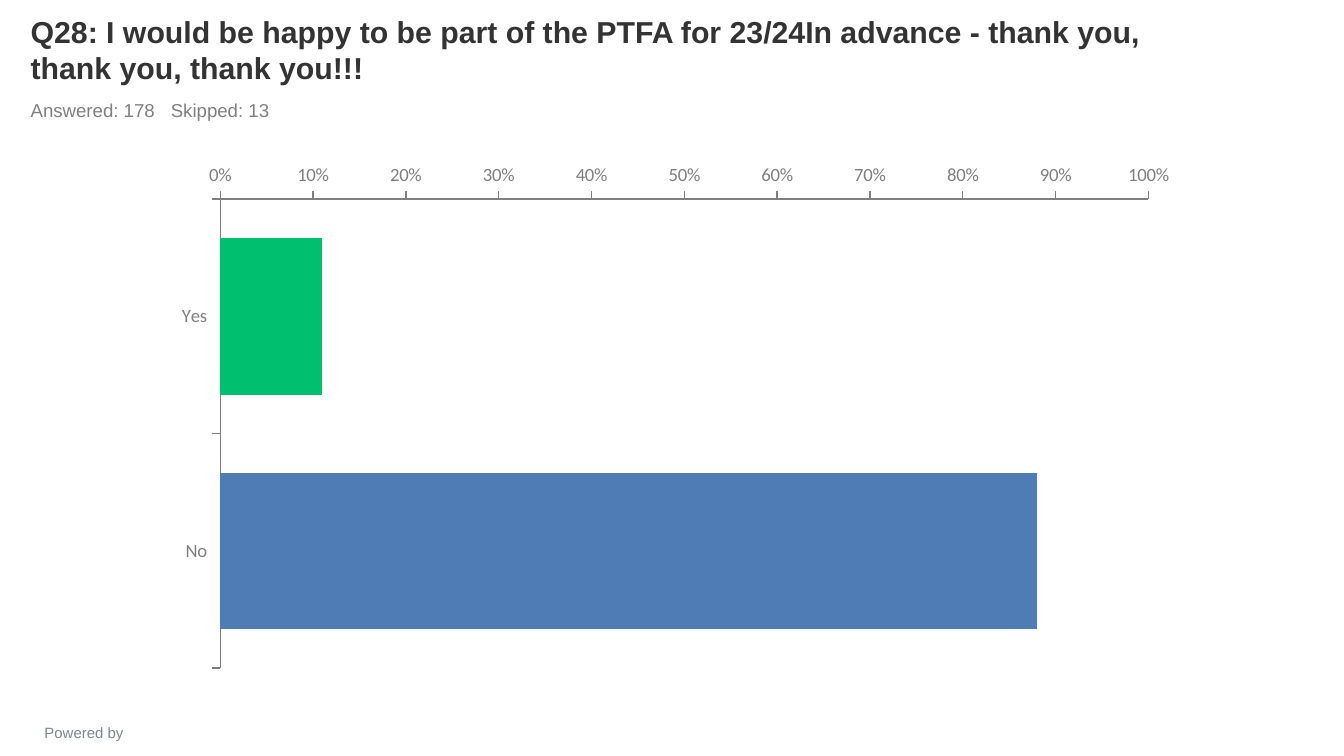
from pptx import Presentation
from pptx.chart.data import CategoryChartData
from pptx.dml.color import RGBColor
from pptx.enum.chart import XL_AXIS_CROSSES, XL_CHART_TYPE, XL_TICK_LABEL_POSITION, XL_TICK_MARK
from pptx.enum.text import MSO_ANCHOR, PP_ALIGN
from pptx.util import Cm, Pt
from lxml.etree import SubElement
from pptx.oxml.ns import qn

DARK = RGBColor(0x33, 0x33, 0x33)
GRAY = RGBColor(0x80, 0x80, 0x80)
AXIS = RGBColor(0x7F, 0x7F, 0x7F)
SLATE = RGBColor(0x7C, 0x87, 0x8E)
GREEN = RGBColor(0x00, 0xBF, 0x6F)
BLUE = RGBColor(0x50, 0x7C, 0xB6)

deck = Presentation()
deck.slide_width = Cm(25.4)
deck.slide_height = Cm(14.29)
slide = deck.slides.add_slide(deck.slide_layouts[6])


def add_text(text, left, top, width, height, size, color, bold=False):
    box = slide.shapes.add_textbox(Cm(left), Cm(top), Cm(width), Cm(height))
    frame = box.text_frame
    frame.word_wrap = True
    frame.text = text
    font = frame.paragraphs[0].runs[0].font
    font.name = "Arial"
    font.size = Pt(size)
    font.bold = bold
    font.color.rgb = color
    return frame


credit = add_text("Powered by", 0.13, 13.56, 2.92, 0.46, 8, SLATE)
credit.paragraphs[0].alignment = PP_ALIGN.CENTER

title = add_text(
    "Q28: I would be happy to be part of the PTFA for 23/24In advance - thank you, thank you, thank you!!!",
    0.33, 0.23, 22.86, 1.52, 16.2, DARK, True)
title.vertical_anchor = MSO_ANCHOR.BOTTOM

count = add_text("Answered: 178\tSkipped: 13", 0.33, 1.75, 22.86, 0.66, 10, GRAY)
props = count.paragraphs[0]._p.get_or_add_pPr()
tabs = SubElement(props, qn("a:tabLst"))
SubElement(tabs, qn("a:tab"), pos=str(Cm(2.65)), algn="l")

data = CategoryChartData(number_format="0%")
data.categories = ["Yes", "No"]
data.add_series("Series 1", [0.11, 0.88])
chart = slide.shapes.add_chart(
    XL_CHART_TYPE.BAR_CLUSTERED, Cm(3.05), Cm(2.92), Cm(19.43), Cm(9.91), data).chart
chart.has_legend = False
chart.has_title = False
chart.font.name = "Calibri"
chart.font.size = Pt(18)
chart.font.color.rgb = DARK

plot = chart.plots[0]
plot.gap_width = 50
plot.overlap = 100
plot.vary_by_categories = False
bars = plot.series[0]
bars.invert_if_negative = False
bars.format.fill.solid()
bars.format.fill.fore_color.rgb = GREEN
for spot, color in enumerate([GREEN, BLUE]):
    fill = bars.points[spot].format.fill
    fill.solid()
    fill.fore_color.rgb = color

for axis in (chart.category_axis, chart.value_axis):
    axis.has_major_gridlines = False
    axis.major_tick_mark = XL_TICK_MARK.OUTSIDE
    axis.minor_tick_mark = XL_TICK_MARK.NONE
    axis.format.line.color.rgb = AXIS
    axis.format.line.width = Pt(0.75)
    font = axis.tick_labels.font
    font.name = "Calibri"
    font.size = Pt(10)
    font.color.rgb = AXIS

rows = chart.category_axis
rows.reverse_order = True
rows.crosses = XL_AXIS_CROSSES.MAXIMUM
rows.tick_label_position = XL_TICK_LABEL_POSITION.LOW

scale = chart.value_axis
scale.minimum_scale = 0
scale.maximum_scale = 1
scale.major_unit = 0.1
scale.tick_labels.number_format = "0%"
scale.tick_labels.number_format_is_linked = False

deck.save("out.pptx")
